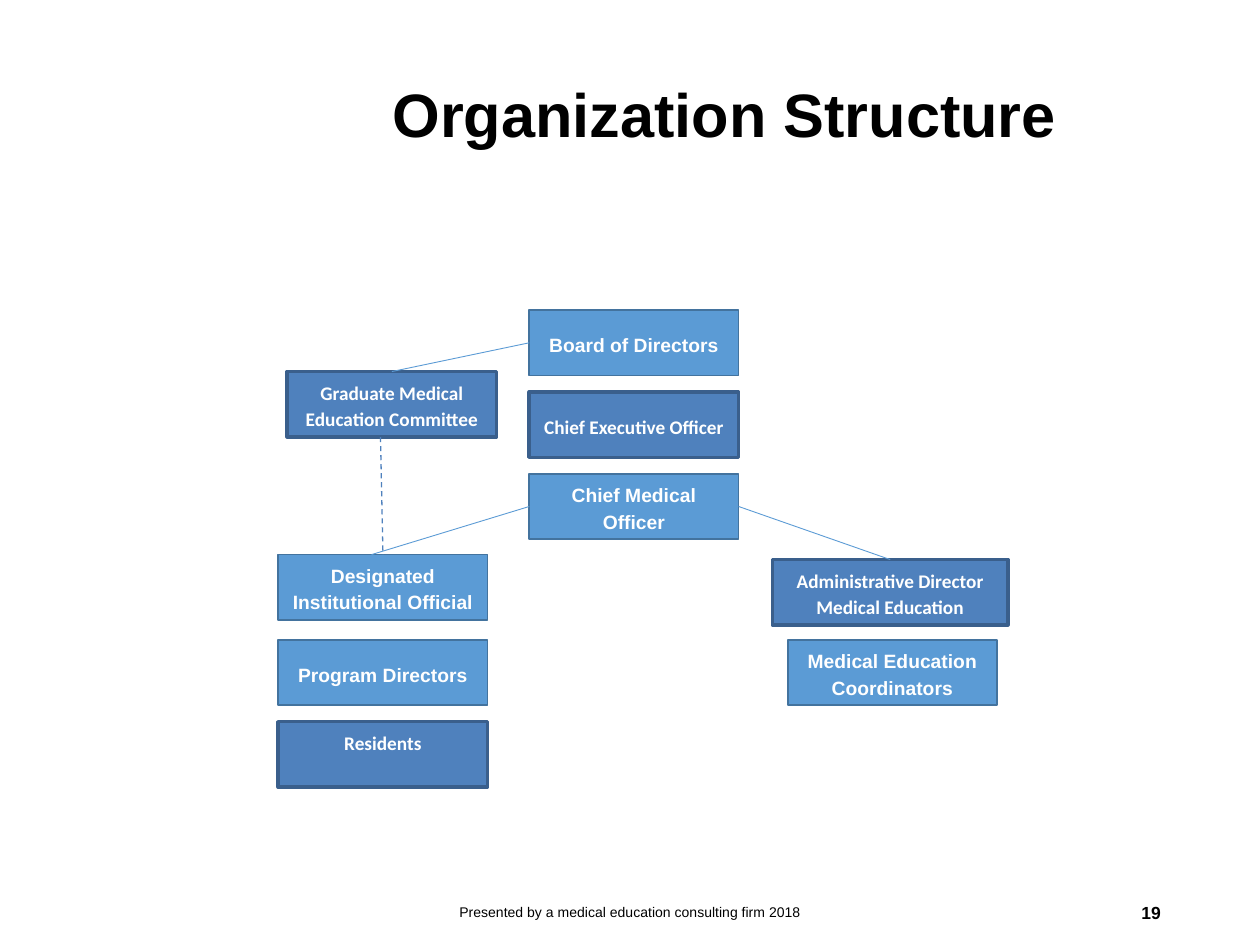
"""Build the organization structure slide."""
from dataclasses import dataclass
from typing import Optional

from lxml import etree
from pptx import Presentation
from pptx import util as u
from pptx.dml.color import RGBColor
from pptx.enum import dml, shapes, text
from pptx.oxml.ns import qn


@dataclass(frozen=True)
class Theme:
    black: str = "000000"
    white: str = "FFFFFF"
    title_size: float = 35
    box_size: float = 11
    footer_size: float = 8
    number_size: float = 10
    font: str = "Arial"


@dataclass(frozen=True)
class Style:
    fill: str
    line: str
    width: float
    font: str


@dataclass(frozen=True)
class Box:
    label: str
    left: float
    top: float
    style: Style
    width: float = 4.22
    anchor: text.MSO_ANCHOR = text.MSO_ANCHOR.MIDDLE


@dataclass(frozen=True)
class End:
    box: str
    site: int
    point: Optional[tuple[float, float]] = None


@dataclass(frozen=True)
class Link:
    start: End
    end: End
    color: str
    width: float = 0.5
    dashed: bool = False


THEME = Theme()
LIGHT = Style("5B9BD5", "43739E", 1, "Arial")
DARK = Style("4F81BD", "3A5F8C", 2, "Calibri")
TOP, LEFT, BOTTOM, RIGHT = range(4)
BOX_HEIGHT, ROW_STEP = 1.32, 1.65
LEFT_COL, MID_COL, RIGHT_COL = 5.61, 10.67, 15.88
MID_TOP, LOW_TOP, OFFICIAL_TOP = 6.25, 12.9, 11.18

BOXES = {
    "board": Box("Board of Directors", MID_COL, MID_TOP, LIGHT),
    "ceo": Box("Chief Executive Officer", MID_COL, MID_TOP + ROW_STEP, DARK),
    "cmo": Box("Chief Medical Officer", MID_COL, MID_TOP + 2 * ROW_STEP, LIGHT),
    "committee": Box("Graduate Medical Education Committee", 5.79, 7.49, DARK),
    "official": Box("Designated Institutional Official", LEFT_COL, OFFICIAL_TOP, LIGHT),
    "programs": Box("Program Directors", LEFT_COL, LOW_TOP, LIGHT),
    "residents": Box("Residents", LEFT_COL, LOW_TOP + ROW_STEP, DARK,
                     anchor=text.MSO_ANCHOR.TOP),
    "admin": Box("Administrative Director Medical Education", 15.57, 11.28, DARK, 4.75),
    "coordinators": Box("Medical Education Coordinators", RIGHT_COL, LOW_TOP, LIGHT),
}

LINKS = [
    Link(End("official", TOP, (7.49, OFFICIAL_TOP)), End("cmo", LEFT), LIGHT.fill),
    Link(End("cmo", RIGHT), End("admin", TOP), LIGHT.fill),
    Link(End("committee", BOTTOM, (7.67, 8.81)), End("official", TOP), DARK.fill, 0.75, True),
    Link(End("committee", TOP), End("board", LEFT), LIGHT.fill),
]


def write(sp, words: str, *, size: float, color: str = THEME.black, font: str = THEME.font,
          bold: bool = False, align=text.PP_ALIGN.CENTER, anchor=text.MSO_ANCHOR.MIDDLE,
          spacing: float = 1.0) -> None:
    """Put formatted text into a shape."""
    tf = sp.text_frame
    tf.word_wrap = True
    tf.auto_size = text.MSO_AUTO_SIZE.NONE
    tf.vertical_anchor = anchor
    p = tf.paragraphs[0]
    p.alignment = align
    p.line_spacing = spacing
    r = p.add_run()
    r.text = words
    r.font.name, r.font.size, r.font.bold = font, u.Pt(size), bold
    r.font.color.rgb = RGBColor.from_string(color)


def add_box(slide, box: Box):
    """Draw one position of the chart."""
    sp = slide.shapes.add_shape(shapes.MSO_SHAPE.RECTANGLE, u.Cm(box.left), u.Cm(box.top),
                                u.Cm(box.width), u.Cm(BOX_HEIGHT))
    sp.shadow.inherit = False
    sp.fill.solid()
    sp.fill.fore_color.rgb = RGBColor.from_string(box.style.fill)
    sp.line.color.rgb = RGBColor.from_string(box.style.line)
    sp.line.width = u.Pt(box.style.width)
    write(sp, box.label, size=THEME.box_size, color=THEME.white, font=box.style.font,
          bold=True, anchor=box.anchor, spacing=1.15)
    return sp


def add_link(slide, link: Link, drawn: dict) -> None:
    """Draw one reporting line, joined wherever it meets a side's middle."""
    start, end = ([u.Cm(v) for v in e.point or (0, 0)] for e in (link.start, link.end))
    line = slide.shapes.add_connector(shapes.MSO_CONNECTOR.STRAIGHT, *start, *end)
    for e, join in ((link.start, line.begin_connect), (link.end, line.end_connect)):
        if e.point is None:
            join(drawn[e.box], e.site)
    line.line.color.rgb = RGBColor.from_string(link.color)
    line.line.width = u.Pt(link.width)
    if link.dashed:
        line.line.dash_style = dml.MSO_LINE.DASH
    etree.SubElement(line._element.spPr, qn("a:effectLst"))


def add_footer(slide, words: str, left: float, width: float, **style) -> None:
    """Place a text box on the footer row."""
    sp = slide.shapes.add_textbox(u.Cm(left), u.Cm(17.88), u.Cm(width), u.Cm(1.02))
    write(sp, words, **style)


def main() -> None:
    """Assemble and save the slide."""
    prs = Presentation()
    prs.slide_width, prs.slide_height = u.Cm(25.4), u.Cm(19.05)
    slide = prs.slides.add_slide(prs.slide_layouts[5])
    title = slide.shapes.title
    title.left, title.top, title.width, title.height = map(u.Cm, (5.54, 0.53, 18.14, 3.68))
    write(title, "Organization Structure", size=THEME.title_size, bold=True, spacing=0.9)
    drawn = {key: add_box(slide, box) for key, box in BOXES.items()}
    for link in LINKS:
        add_link(slide, link, drawn)
    add_footer(slide, "Presented by a medical education consulting firm 2018", 8.41, 8.59,
               size=THEME.footer_size)
    add_footer(slide, "19", 17.93, 5.72, size=THEME.number_size, bold=True,
               align=text.PP_ALIGN.RIGHT)
    prs.save("out.pptx")


if __name__ == "__main__":
    main()
